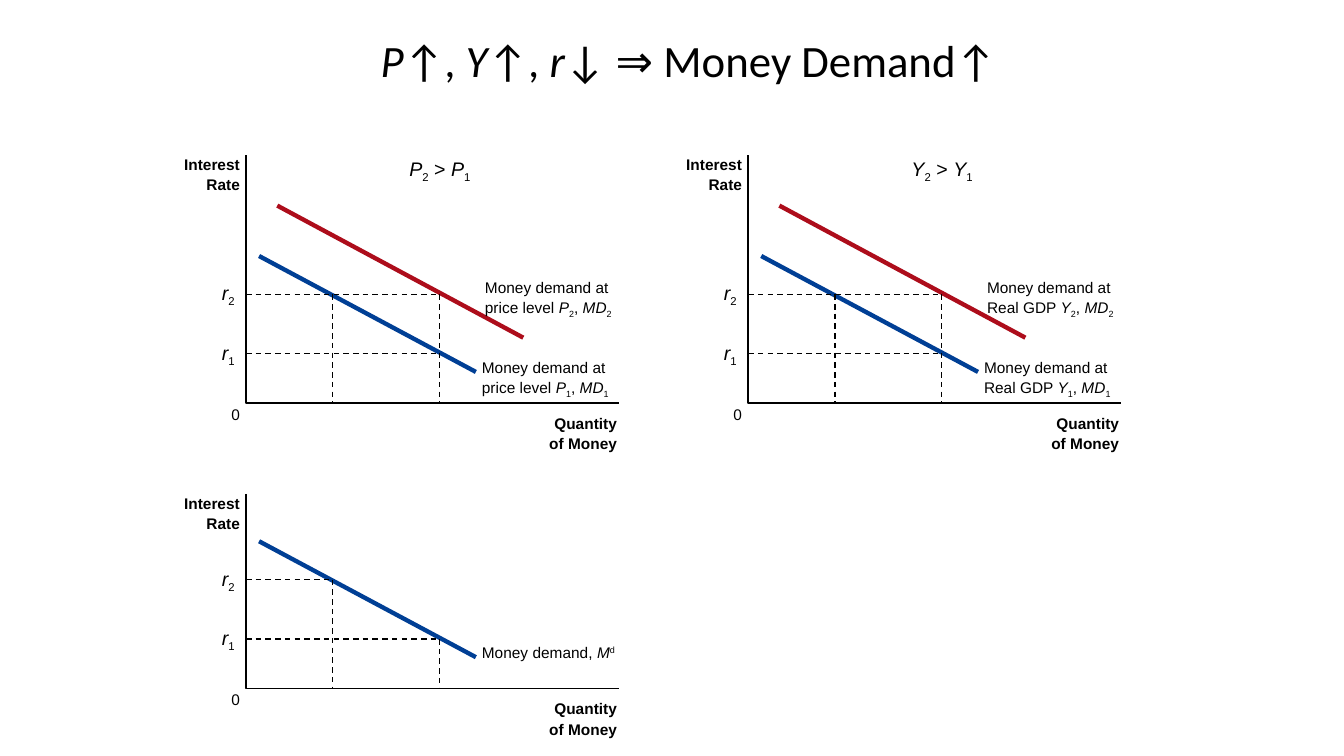
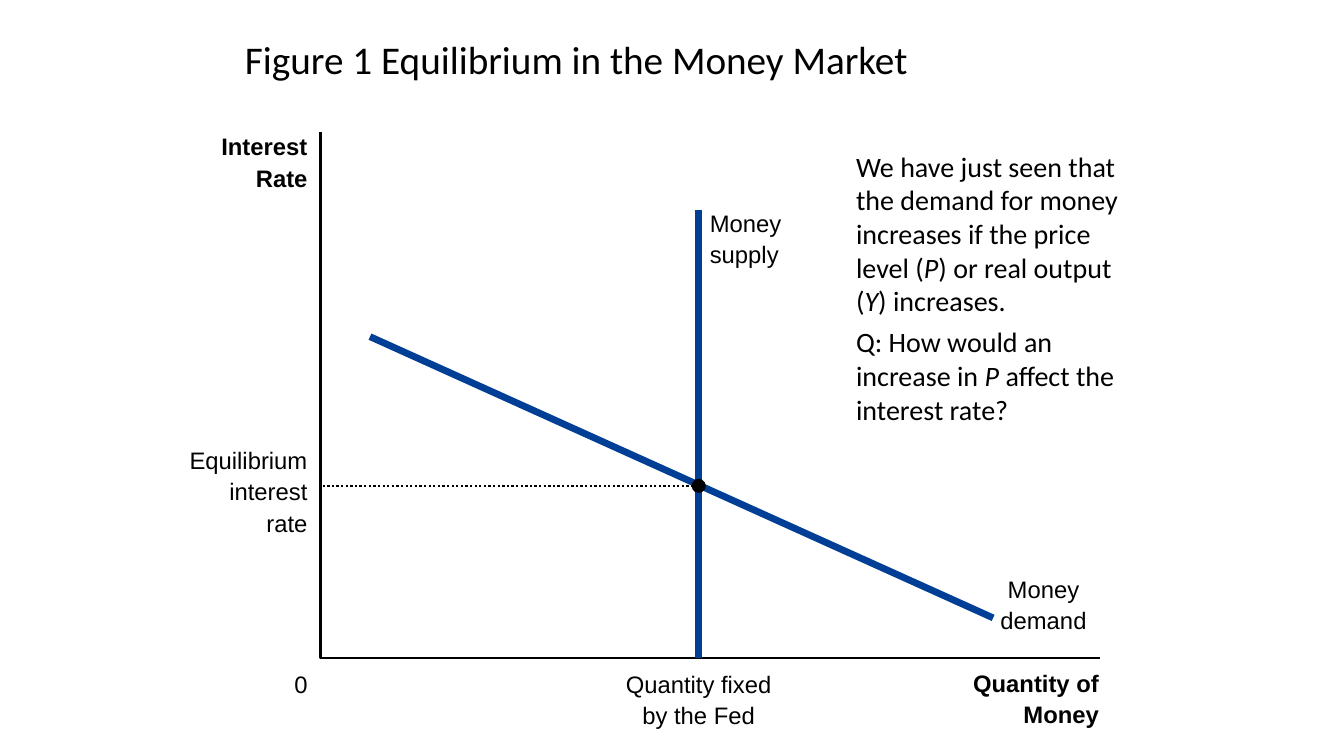
from dataclasses import dataclass

from lxml import etree
from pptx import Presentation
from pptx.dml.color import RGBColor
from pptx.enum import dml, shapes, text
from pptx.oxml.ns import qn
from pptx.util import Inches, Pt


@dataclass(frozen=True)
class Theme:
    black: RGBColor = RGBColor(0x00, 0x00, 0x00)
    blue: RGBColor = RGBColor(0x00, 0x3F, 0x95)
    red: RGBColor = RGBColor(0xAD, 0x0D, 0x1B)
    heading_font: str = "Calibri"
    label_font: str = "Arial"
    title: int = 32
    figure_title: int = 28
    body: int = 20
    large_label: int = 17
    symbol: int = 14
    small_label: int = 11
    thin: float = 1
    medium: float = 1.63
    curve: float = 3.13
    thick_curve: float = 4.88


theme = Theme()
LEFT, CENTER, RIGHT = text.PP_ALIGN.LEFT, text.PP_ALIGN.CENTER, text.PP_ALIGN.RIGHT
BASELINES = {"sub": "-25000", "sup": "30000"}


def add_text(slide, x, y, paragraphs, size, align=LEFT, width=2.0, height=None,
             font=theme.label_font, gap=0.12, spacing=None):
    """Place text so that x is its left edge, centre or right edge, as align says.

    A paragraph is a list of (text, style) runs; styles are "", "b", "i", "sub", "sup".
    A given height centres the text vertically; gap is a share of the type size.
    """
    left = x - {LEFT: 0, CENTER: width / 2, RIGHT: width}[align]
    box_height = height or len(paragraphs) * size * 1.2 / 72
    box = slide.shapes.add_textbox(Inches(left), Inches(y), Inches(width), Inches(box_height))
    frame = box.text_frame
    frame.word_wrap = True
    frame.margin_left = frame.margin_right = frame.margin_top = frame.margin_bottom = 0
    frame.vertical_anchor = text.MSO_ANCHOR.MIDDLE if height else text.MSO_ANCHOR.TOP
    for index, runs in enumerate(paragraphs):
        paragraph = frame.add_paragraph() if index else frame.paragraphs[0]
        paragraph.alignment = align
        if spacing:
            paragraph.line_spacing = spacing
        if index < len(paragraphs) - 1:
            paragraph.space_after = Pt(size * gap)
        for words, style in runs:
            run = paragraph.add_run()
            run.text = words
            run.font.name = font
            run.font.size = Pt(size)
            run.font.color.rgb = theme.black
            run.font.bold = style == "b"
            run.font.italic = style == "i"
            if style in BASELINES:
                run.font._element.set("baseline", BASELINES[style])


def add_line(slide, start, end, color, width, dash=None):
    line = slide.shapes.add_connector(
        shapes.MSO_CONNECTOR.STRAIGHT, *[Inches(value) for value in (*start, *end)])
    line.line.color.rgb = color
    line.line.width = Pt(width)
    if dash:
        line.line.dash_style = dash
    etree.SubElement(line._element.spPr, qn("a:effectLst"))


presentation = Presentation()
presentation.slide_width, presentation.slide_height = Inches(13.33), Inches(7.5)
blank = presentation.slide_layouts[6]
shift_slide = presentation.slides.add_slide(blank)
market_slide = presentation.slides.add_slide(blank)

# Titles
shift_title = [("P", "i"), ("↑, ", ""), ("Y", "i"), ("↑, ", ""), ("r", "i"),
               ("↓ ⇒ Money Demand↑", "")]
add_text(shift_slide, 6.83, 0.25, [shift_title], theme.title, CENTER, 8.8, 0.75,
         theme.heading_font, spacing=0.9)
add_text(market_slide, 2.43, 0.25, [[("Figure 1 Equilibrium in the Money Market", "")]],
         theme.figure_title, LEFT, 8.8, 0.75, theme.heading_font, spacing=0.8)

# Axes: slide, origin x, origin y, height, width, line width
panel_origins = [(2.44, 4.0), (7.42, 4.0), (2.44, 6.83)]
panel_heights = [2.46, 2.46, 1.93]
axes = [(shift_slide, x, y, height, 3.7, theme.thin)
        for (x, y), height in zip(panel_origins, panel_heights)]
axes.append((market_slide, 3.18, 6.53, 5.22, 7.73, theme.medium))
for slide, x, y, height, width, line_width in axes:
    builder = slide.shapes.build_freeform(Inches(x), Inches(y - height))
    builder.add_line_segments(
        [(Inches(x), Inches(y)), (Inches(x + width), Inches(y))], close=False)
    axis = builder.convert_to_shape()
    axis.shadow.inherit = False
    axis.fill.background()
    axis.line.color.rgb = theme.black
    axis.line.width = Pt(line_width)

# Slide 1: demand panels, measured from each origin
rates = {"1": -0.49, "2": -1.08}
quantities = [0.86, 1.92]
curves = {
    "1": ((0.13, -1.46), (2.28, -0.31), theme.blue, (2.34, -0.45)),
    "2": ((0.31, -1.96), (2.75, -0.65), theme.red, (2.37, -1.24)),
}
shifters = [("P", "price level "), ("Y", "Real GDP "), None]
for (x, y), height, shifter in zip(panel_origins, panel_heights, shifters):
    axis_labels = [
        (-0.06, -height, ["Interest", "Rate"], "b"),
        (3.68, 0.11, ["Quantity", "of Money"], "b"),
        (-0.06, 0.02, ["0"], ""),
    ]
    for dx, dy, lines, style in axis_labels:
        add_text(shift_slide, x + dx, y + dy, [[(line, style)] for line in lines],
                 theme.small_label, RIGHT)

    for number in "12" if shifter else "1":
        start, end, color, (dx, dy) = curves[number]
        add_line(shift_slide, (x + start[0], y + start[1]), (x + end[0], y + end[1]),
                 color, theme.curve)
        if shifter:
            symbol, name = shifter
            label = [[("Money demand at", "")],
                     [(name, ""), (symbol, "i"), (number, "sub"), (", ", ""),
                      ("MD", "i"), (number, "sub")]]
        else:
            label = [[("Money demand, ", ""), ("M", "i"), ("d", "sup")]]
        add_text(shift_slide, x + dx, y + dy, label, theme.small_label)

    widest_at_rate_2 = quantities[1] if shifter else quantities[0]
    highest_at_quantity_2 = rates["2"] if shifter else rates["1"]
    guides = [
        ((0, rates["2"]), (widest_at_rate_2, rates["2"])),
        ((0, rates["1"]), (quantities[1], rates["1"])),
        ((quantities[0], rates["2"]), (quantities[0], 0)),
        ((quantities[1], highest_at_quantity_2), (quantities[1], 0)),
    ]
    for start, end in guides:
        add_line(shift_slide, (x + start[0], y + start[1]), (x + end[0], y + end[1]),
                 theme.black, theme.thin, dml.MSO_LINE.DASH)
    for number, rate in rates.items():
        add_text(shift_slide, x - 0.24, y + rate - 0.13, [[("r", "i"), (number, "sub")]],
                 theme.symbol, width=0.24)
    if shifter:
        comparison = [(symbol, "i"), ("2", "sub"), (" > ", ""), (symbol, "i"), ("1", "sub")]
        add_text(shift_slide, x + 1.62, y - 2.44, [comparison], theme.symbol)

# Slide 2: money market
equilibrium_x, equilibrium_y = 6.93, 4.82
add_line(market_slide, (3.67, 3.34), (9.85, 6.13), theme.blue, theme.thick_curve)
add_line(market_slide, (equilibrium_x, 2.08), (equilibrium_x, 6.53),
         theme.blue, theme.thick_curve)
add_line(market_slide, (3.2, equilibrium_y), (equilibrium_x, equilibrium_y),
         theme.black, theme.medium, dml.MSO_LINE.ROUND_DOT)

diameter = 0.14
point = market_slide.shapes.add_shape(
    shapes.MSO_SHAPE.OVAL, Inches(equilibrium_x - diameter / 2),
    Inches(equilibrium_y - diameter / 2), Inches(diameter), Inches(diameter))
point.shadow.inherit = False
point.fill.solid()
point.fill.fore_color.rgb = theme.black
point.line.fill.background()

market_labels = [
    (3.05, 1.31, ["Interest", "Rate"], "b", RIGHT),
    (10.9, 6.63, ["Quantity of", "Money"], "b", RIGHT),
    (3.05, 6.64, ["0"], "", RIGHT),
    (3.05, 4.42, ["Equilibrium", "interest", "rate"], "", RIGHT),
    (equilibrium_x, 6.64, ["Quantity fixed", "by the Fed"], "", CENTER),
    (7.04, 2.07, ["Money", "supply"], "", LEFT),
    (10.35, 5.7, ["Money", "demand"], "", CENTER),
]
for x, y, lines, style, align in market_labels:
    add_text(market_slide, x, y, [[(line, style)] for line in lines],
             theme.large_label, align)

discussion = [
    [("We have just seen that the demand for money increases if the price level (", ""),
     ("P", "i"), (") or real output (", ""), ("Y", "i"), (") increases.", "")],
    [("Q: How would an increase in ", ""), ("P", "i"),
     (" affect the interest rate?", "")],
]
add_text(market_slide, 8.49, 1.48, discussion, theme.body, width=2.82,
         font=theme.heading_font, gap=0.27)

presentation.save("out.pptx")
